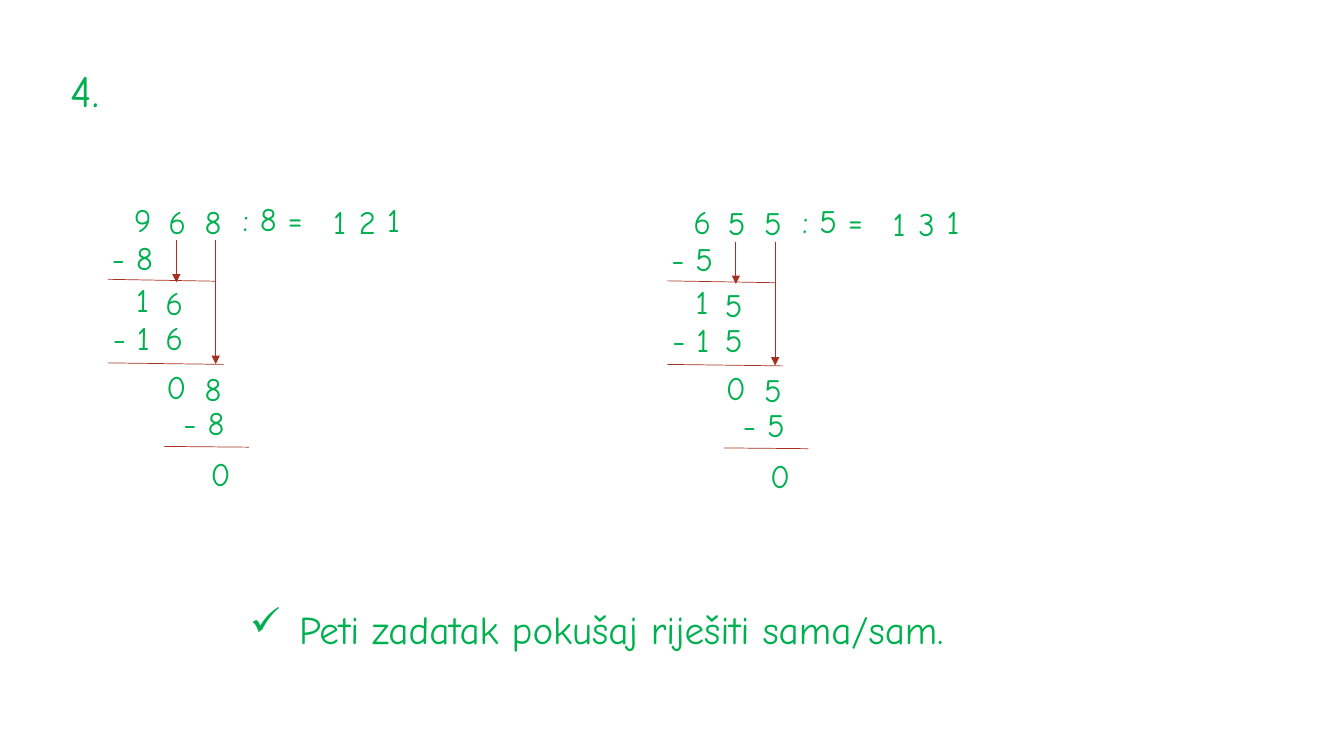
from lxml import etree
from pptx import Presentation
from pptx import util as u
from pptx.dml.color import RGBColor
from pptx.enum import shapes, text
from pptx.oxml.ns import qn

GREEN, RED = "00B050", "A63121"
WIDTH, HEIGHT = 13.33, 7.5
COLUMNS, ROWS = 40, 20


def color(hex_string):
    return RGBColor.from_string(hex_string)


class Sheet:
    """Holds the style and the slide; lengths are grid columns and rows."""

    font = "Comic Neue"
    digit_size = 23.4
    digit_indent = 0.19

    def __init__(self, deck):
        deck.slide_width, deck.slide_height = u.Inches(WIDTH), u.Inches(HEIGHT)
        self.slide = deck.slides.add_slide(deck.slide_layouts[6])

    def x(self, columns):
        return u.Inches(columns * WIDTH / COLUMNS)

    def y(self, rows):
        return u.Inches(rows * HEIGHT / ROWS)

    def label(self, words, column, row, columns, rows, *, size, inset=0.1,
              anchor=text.MSO_ANCHOR.BOTTOM, align=text.PP_ALIGN.LEFT,
              spacing=0.9, bullet=None, hanging=0.49, tab=None):
        box = self.slide.shapes.add_textbox(
            self.x(column), self.y(row), self.x(columns), self.y(rows))
        frame = box.text_frame
        frame.word_wrap = True
        frame.vertical_anchor = anchor
        frame.margin_left = u.Inches(inset)
        paragraph = frame.paragraphs[0]
        properties = paragraph._p.get_or_add_pPr()
        if bullet:
            properties.set("marL", str(u.Inches(hanging)))
            properties.set("indent", str(-u.Inches(hanging)))
            etree.SubElement(properties, qn("a:buChar"), char=bullet)
        if tab:
            stops = etree.SubElement(properties, qn("a:tabLst"))
            etree.SubElement(stops, qn("a:tab"), pos=str(u.Inches(tab)), algn="l")
        paragraph.alignment = align
        paragraph.line_spacing = spacing
        run = paragraph.add_run()
        run.text = words
        run.font.name, run.font.size = self.font, u.Pt(size)
        run.font.color.rgb = color(GREEN)

    def line(self, start, end, arrow=False):
        connector = self.slide.shapes.add_connector(
            shapes.MSO_CONNECTOR.STRAIGHT,
            self.x(start[0]), self.y(start[1]), self.x(end[0]), self.y(end[1]))
        connector.line.color.rgb = color(RED)
        connector.line.width = u.Pt(0.5)
        if arrow:
            etree.SubElement(connector.line._get_or_add_ln(), qn("a:tailEnd"),
                             type="triangle")
        etree.SubElement(connector._element.spPr, qn("a:effectLst"))

    def division(self, dividend, divisor, left, top):
        """Sets out the long division of a three-digit number, step by step."""
        hundreds, tens, ones = str(dividend)
        quotient = str(dividend // divisor)
        first, second, third = (int(digit) * divisor for digit in quotient)
        carry = int(hundreds) - first
        rest = carry * 10 + int(tens) - second
        last = rest * 10 + int(ones) - third

        entries = [
            (hundreds, 0.42, 0.04, 1.89),
            (tens, 1.44, 0.07, 1.89),
            (ones, 2.52, 0.07, 1.89),
            (f": {divisor} =", 3.66, 0.01, 3.33),
            (quotient[1], 7.11, 0.09, 1.62),
            (quotient[2], 7.95, 0.04, 1.62),
            (f"- {first}", -0.24, 1.03, 2.94),
            (f"{carry}", 0.48, 2.15, 2.94),
            (tens, 1.35, 2.23, 1.98),
            (f"{rest}", 1.38, 4.44, 2.94),
            (ones, 2.52, 4.49, 1.98),
            (f"- {third}", 1.89, 5.4, 2.94),
            (f"{last}", 2.7, 6.76, 2.94),
        ]
        digit_style = dict(size=self.digit_size, inset=self.digit_indent)
        for words, column, row, columns in entries:
            self.label(words, left + column, top + row, columns, 1.44, **digit_style)
        self.label(quotient[0], left + 6.03, top + 0.09, 1.89, 1.44,
                   align=text.PP_ALIGN.CENTER, **digit_style)
        second_tens, second_ones = str(second)
        self.label(f"- {second_tens}\t{second_ones}", left - 0.21, top + 3.16,
                   4.86, 1.44, tab=0.52, **digit_style)

        rules = [(0.21, 2.39, 3.42, 2.44), (0.21, 4.6, 3.66, 4.64),
                 (1.89, 6.81, 4.41, 6.83)]
        for x1, y1, x2, y2 in rules:
            self.line((left + x1, top + y1), (left + x2, top + y2))
        for column, tip in [(2.25, 2.47), (3.42, 4.63)]:
            self.line((left + column, top + 1.35), (left + column, top + tip),
                      arrow=True)


def main():
    deck = Presentation()
    sheet = Sheet(deck)
    sheet.label("4.", 1.8, 1.97, 3.06, 1.25, size=32)
    sheet.division(968, 8, left=3, top=5)
    sheet.division(655, 5, left=19.65, top=5.04)
    sheet.label("Peti zadatak pokušaj riješiti sama/sam.", 7.14, 15.87, 24.58, 1.52,
                size=28, anchor=text.MSO_ANCHOR.TOP, spacing=1.0, bullet="✓")
    deck.save("out.pptx")


if __name__ == "__main__":
    main()
